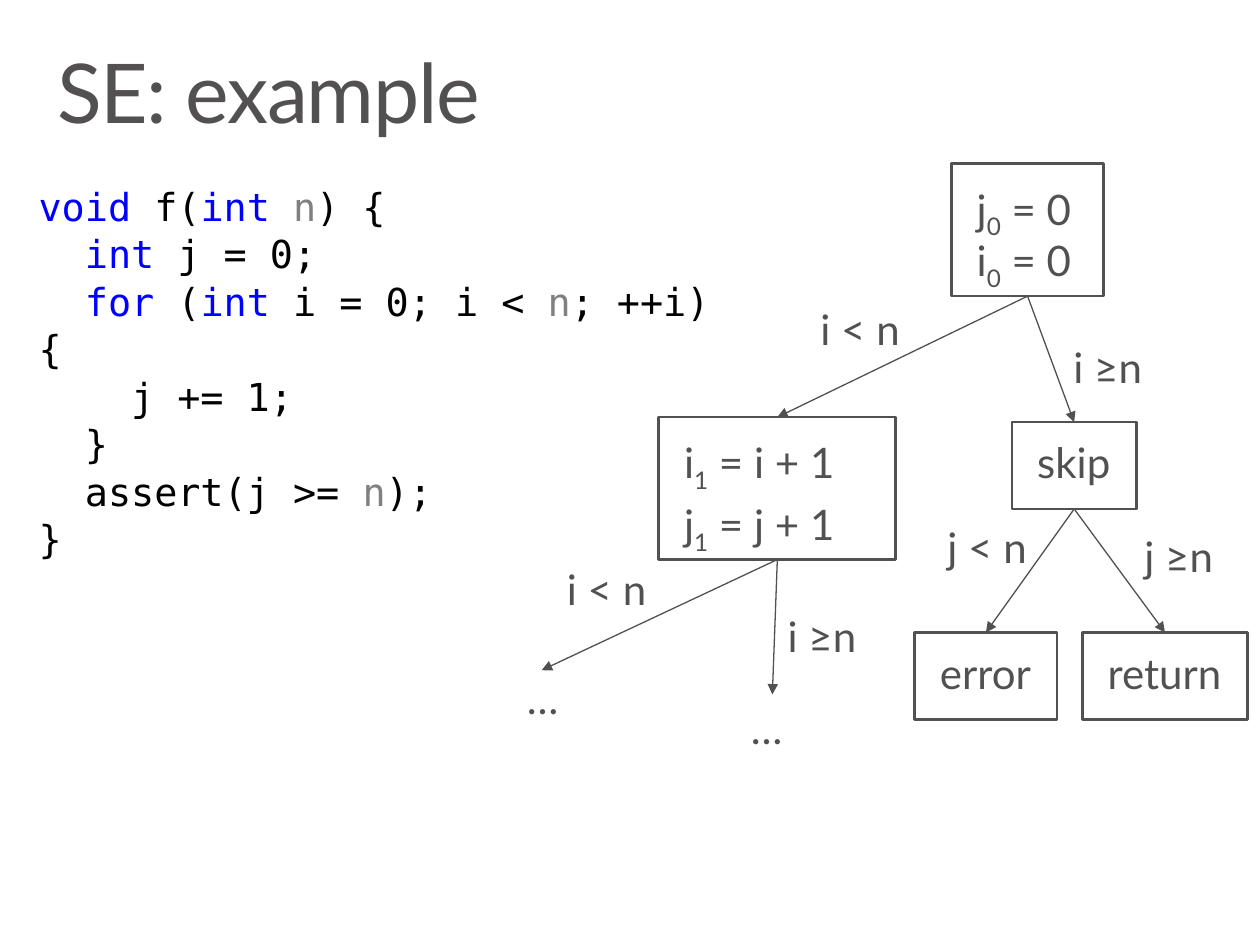
from pptx import Presentation
from pptx import util as u
from pptx.dml.color import RGBColor
from pptx.enum import shapes, text
from pptx.oxml.ns import qn
from lxml import etree

INK = "525051"
TOKEN_COLORS = {"void": "0000FF", "int": "0000FF", "for": "0000FF", "n": "808080"}

# "|" separates differently coloured tokens
CODE = [
    "void| f(|int| |n|) {",
    "  |int| j = 0;",
    "  |for| (|int| i = 0; i < |n|; ++i) {",
    "    j += 1;",
    "  }",
    "  assert(j >= |n|);",
    "}",
]

# name: (paragraphs, left, top, width, height, wrap); "_" marks a subscript digit
NODES = {
    "init": (["j_0 = 0\ni_0 = 0"], 19.18, 3.3, 3.07, 2.67, False),
    "loop": (["i_1 = i + 1", "j_1 = j + 1"], 13.28, 8.41, 4.78, 2.87, True),
    "skip": (["skip"], 20.4, 8.51, 2.51, 1.75, False),
    "error": (["error"], 18.44, 12.75, 2.87, 1.75, False),
    "return": (["return"], 21.82, 12.75, 3.33, 1.75, False),
}
EDGES = [("init", "loop"), ("init", "skip"), ("skip", "error"), ("skip", "return")]
OPEN_ENDS = [(10.92, 13.51), (15.57, 14)]

# text, left, top, width
LABELS = [
    ("j ≥n", 22.56, 10.39, 2.54),
    ("i < n", 16.03, 5.82, 2.77),
    ("i ≥n", 21.13, 6.58, 2.54),
    ("j < n", 18.59, 10.21, 2.77),
    ("i < n", 10.92, 11.07, 2.77),
    ("i ≥n", 15.37, 12.01, 2.54),
    ("…", 10.11, 13.26, 1.65),
    ("…", 14.63, 13.87, 1.65),
]


def rgb(value):
    return RGBColor.from_string(value)


def add_run(p, words, size, font, color):
    r = p.add_run()
    r.text = words
    r.font.size = u.Pt(size)
    r.font.name = font
    r.font.color.rgb = rgb(color)
    return r


def set_insets(tf, x, y):
    tf.margin_left = tf.margin_right = u.Cm(x)
    tf.margin_top = tf.margin_bottom = u.Cm(y)


def add_formula(p, words):
    """Add text with subscripts and line breaks, run by run."""
    for i, line in enumerate(words.split("\n")):
        if i:
            p.add_line_break()
        first, *rest = line.split("_")
        add_run(p, first, 24, "Lato", INK)
        for part in rest:
            sub = add_run(p, part[0], 24, "Lato", INK)
            sub._r.get_or_add_rPr().set("baseline", "-25000")
            add_run(p, part[1:], 24, "Lato", INK)


def fill_text(sp, paragraphs, wrap=False):
    tf = sp.text_frame
    tf.word_wrap = wrap
    tf.auto_size = text.MSO_AUTO_SIZE.SHAPE_TO_FIT_TEXT
    tf.vertical_anchor = text.MSO_ANCHOR.TOP
    set_insets(tf, 0.51, 0.41)
    for i, words in enumerate(paragraphs):
        p = tf.add_paragraph() if i else tf.paragraphs[0]
        p.alignment = text.PP_ALIGN.LEFT
        p.line_spacing = 0.9
        p.space_after = u.Pt(6)
        add_formula(p, words)


def add_title(s, words):
    sp = s.shapes.title
    sp.left, sp.top, sp.width, sp.height = u.Cm(0.74), u.Cm(0.81), u.Cm(23.9), u.Cm(2.49)
    tf = sp.text_frame
    tf.auto_size = text.MSO_AUTO_SIZE.NONE
    tf.vertical_anchor = text.MSO_ANCHOR.TOP
    set_insets(tf, 0.41, 0.25)
    p = tf.paragraphs[0]
    p.alignment = text.PP_ALIGN.LEFT
    p.line_spacing = 0.9
    r = add_run(p, words, 47.1, "Lato", INK)
    r._r.get_or_add_rPr().set("spc", "-80")


def add_code(s):
    tf = s.shapes.add_textbox(u.Cm(0.53), u.Cm(3.53), u.Cm(14.1), u.Cm(6.83)).text_frame
    tf.word_wrap = True
    for i, line in enumerate(CODE):
        p = tf.add_paragraph() if i else tf.paragraphs[0]
        p.line_spacing = 1.03
        for token in line.split("|"):
            add_run(p, token, 22, "DejaVu Sans Mono", TOKEN_COLORS.get(token, "000000"))


def add_node(s, paragraphs, left, top, width, height, wrap):
    sp = s.shapes.add_shape(shapes.MSO_SHAPE.RECTANGLE,
                            u.Cm(left), u.Cm(top), u.Cm(width), u.Cm(height))
    sp.shadow.inherit = False
    sp.fill.background()
    sp.line.color.rgb = rgb(INK)
    sp.line.width = u.Pt(1.5)
    fill_text(sp, paragraphs, wrap)
    return sp


def add_label(s, words, left, top, width):
    sp = s.shapes.add_textbox(u.Cm(left), u.Cm(top), u.Cm(width), u.Cm(1.75))
    fill_text(sp, [words])


def add_arrow(s, source, x=0, y=0, target=None):
    """Arrow from the bottom of source to the point, or to the top of target."""
    c = s.shapes.add_connector(shapes.MSO_CONNECTOR.STRAIGHT, 0, 0, u.Cm(x), u.Cm(y))
    c.begin_connect(source, 2)
    if target is not None:
        c.end_connect(target, 0)
    c.line.color.rgb = rgb(INK)
    c.line.width = u.Pt(0.75)
    etree.SubElement(c.line._get_or_add_ln(), qn("a:tailEnd"), type="triangle")
    etree.SubElement(c._element.spPr, qn("a:effectLst"))


def main():
    prs = Presentation()
    prs.slide_width, prs.slide_height = u.Cm(25.4), u.Cm(19.05)
    s = prs.slides.add_slide(prs.slide_layouts[5])

    # Title and program
    add_title(s, "SE: example")
    add_code(s)

    # Execution tree
    nodes = {name: add_node(s, *node) for name, node in NODES.items()}
    for source, target in EDGES:
        add_arrow(s, nodes[source], target=nodes[target])
    for x, y in OPEN_ENDS:
        add_arrow(s, nodes["loop"], x, y)

    # Branch conditions and continuations
    for label in LABELS:
        add_label(s, *label)

    prs.save("out.pptx")


if __name__ == "__main__":
    main()
